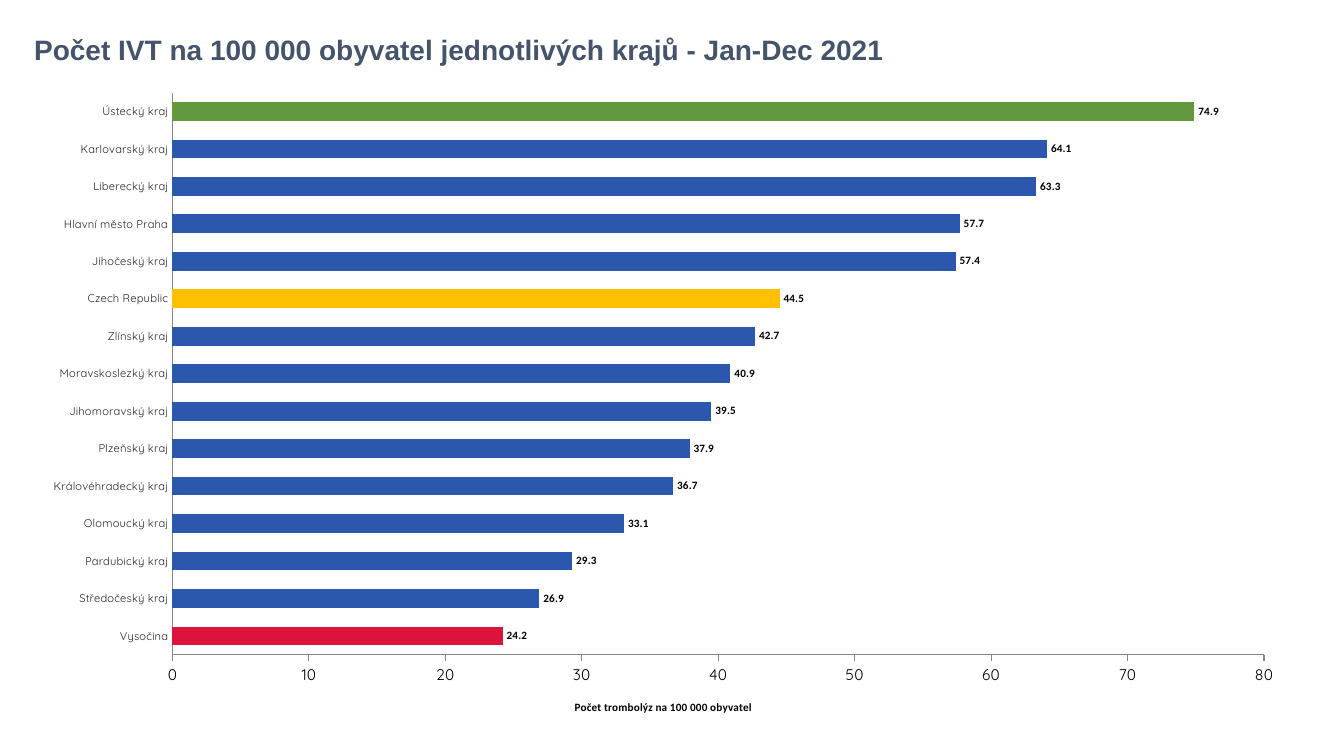
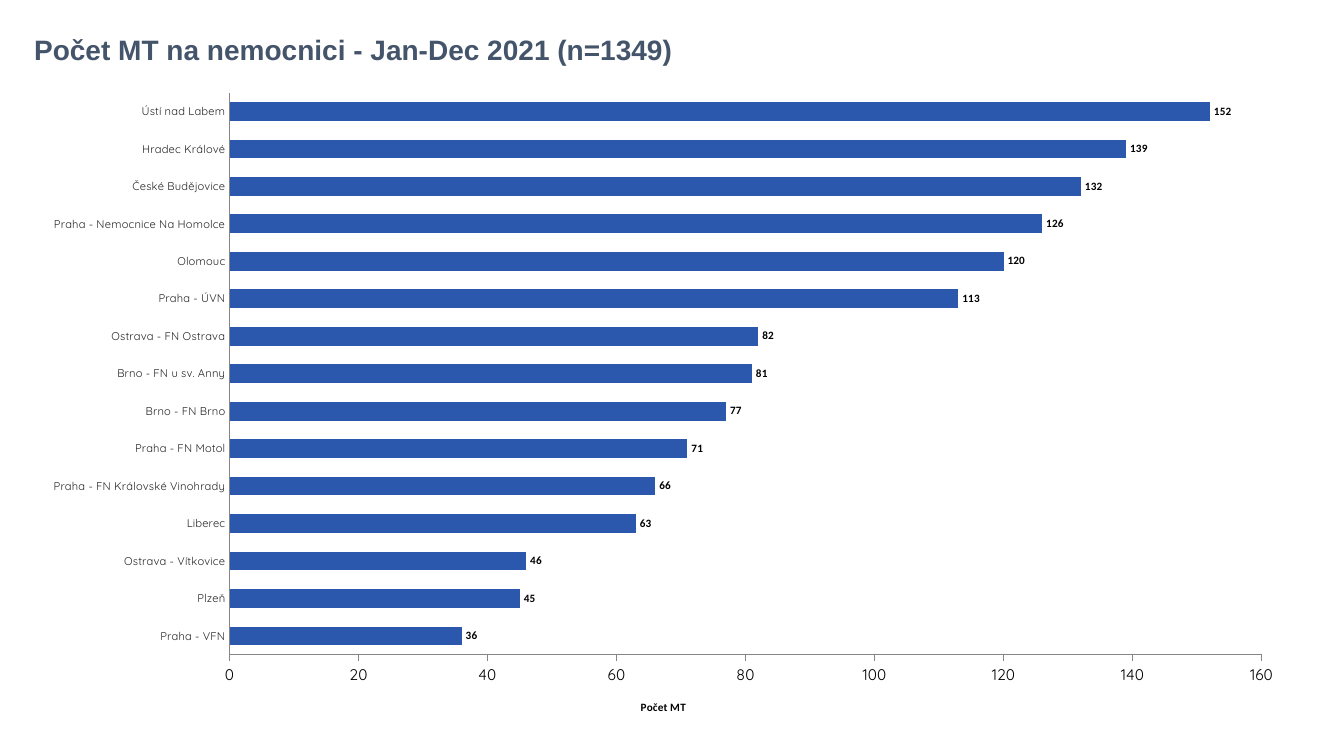
from dataclasses import dataclass

from pptx import Presentation
from pptx.chart.data import CategoryChartData
from pptx.dml.color import RGBColor as Rgb
from pptx.enum.chart import (XL_CHART_TYPE as ChartType, XL_LABEL_POSITION as LabelPosition,
                             XL_TICK_MARK as TickMark)
from pptx.enum.text import MSO_ANCHOR as Anchor
from pptx.util import Inches, Pt


@dataclass(frozen=True)
class Theme:
    heading: Rgb = Rgb.from_string("44546A")
    text: Rgb = Rgb.from_string("000000")
    category: Rgb = Rgb.from_string("262626")
    axis: Rgb = Rgb.from_string("868686")
    bar: Rgb = Rgb.from_string("2B58AD")
    lowest: Rgb = Rgb.from_string("DC143C")
    national: Rgb = Rgb.from_string("FFC000")
    highest: Rgb = Rgb.from_string("62993E")
    heading_font: str = "Arial"
    chart_font: str = "Calibri"
    axis_font: str = "Quicksand"
    heading_size: int = 20
    chart_size: int = 18
    scale_size: int = 11
    small_size: int = 8


THEME = Theme()
SLIDE_SIZE = (13.33, 7.5)
TITLE_BOX = (0.24, 0.15, 10.94, 0.72)
CHART_BOX = (0.28, 0.79, 12.6, 6.5)

REGIONS = {
    "Vysočina": 24.2,
    "Středočeský kraj": 26.9,
    "Pardubický kraj": 29.3,
    "Olomoucký kraj": 33.1,
    "Královéhradecký kraj": 36.7,
    "Plzeňský kraj": 37.9,
    "Jihomoravský kraj": 39.5,
    "Moravskoslezký kraj": 40.9,
    "Zlínský kraj": 42.7,
    "Czech Republic": 44.5,
    "Jihočeský kraj": 57.4,
    "Hlavní město Praha": 57.7,
    "Liberecký kraj": 63.3,
    "Karlovarský kraj": 64.1,
    "Ústecký kraj": 74.9,
}
HOSPITALS = {
    "Praha - VFN": 36,
    "Plzeň": 45,
    "Ostrava - Vítkovice": 46,
    "Liberec": 63,
    "Praha - FN Královské Vinohrady": 66,
    "Praha - FN Motol": 71,
    "Brno - FN Brno": 77,
    "Brno - FN u sv. Anny": 81,
    "Ostrava - FN Ostrava": 82,
    "Praha - ÚVN": 113,
    "Olomouc": 120,
    "Praha - Nemocnice Na Homolce": 126,
    "České Budějovice": 132,
    "Hradec Králové": 139,
    "Ústí nad Labem": 152,
}
RANKINGS = [
    {
        "title": "Počet IVT na 100 000 obyvatel jednotlivých krajů - Jan-Dec 2021",
        "scale_title": "Počet trombolýz na 100 000 obyvatel",
        "counts": REGIONS,
        "step": 10,
        "highlights": {"Vysočina": THEME.lowest, "Czech Republic": THEME.national,
                       "Ústecký kraj": THEME.highest},
    },
    {
        "title": "Počet MT na nemocnici - Jan-Dec 2021 (n=1349)",
        "scale_title": "Počet MT",
        "counts": HOSPITALS,
        "step": 20,
        "highlights": {},
    },
]


def set_all(target, **values):
    for name, value in values.items():
        setattr(target, name, value)


def style_font(font, name, size, color, bold=False):
    set_all(font, name=name, size=Pt(size), bold=bold)
    font.color.rgb = color


def add_title(slide, box, title):
    frame = slide.shapes.add_textbox(*map(Inches, box)).text_frame
    set_all(frame, word_wrap=True, vertical_anchor=Anchor.MIDDLE)
    heading = frame.paragraphs[0]
    set_all(heading, text=title, line_spacing=0.9)
    style_font(heading.font, THEME.heading_font, THEME.heading_size, THEME.heading, True)


def style_axis(axis, tick_mark, size, color):
    set_all(axis, has_major_gridlines=False, major_tick_mark=tick_mark,
            minor_tick_mark=TickMark.NONE)
    style_font(axis.tick_labels.font, THEME.axis_font, size, color)
    axis.format.line.color.rgb = THEME.axis
    axis.format.line.width = Pt(0.75)


def style_scale(axis, title, step, highest):
    """Start the value axis at zero and end it at the first step above the highest bar."""
    style_axis(axis, TickMark.OUTSIDE, THEME.scale_size, THEME.text)
    set_all(axis, minimum_scale=0, major_unit=step,
            maximum_scale=(highest // step + 1) * step)
    frame = axis.axis_title.text_frame
    frame.text = title
    style_font(frame.paragraphs[0].runs[0].font, THEME.chart_font, THEME.small_size,
               THEME.text, True)


def style_bars(plot, counts, highlights):
    set_all(plot, gap_width=100, vary_by_categories=False, has_data_labels=True)
    set_all(plot.data_labels, show_value=True, position=LabelPosition.OUTSIDE_END)
    style_font(plot.data_labels.font, THEME.chart_font, THEME.small_size, THEME.text, True)
    bars = plot.series[0]
    bars.invert_if_negative = False
    bars.format.fill.solid()
    bars.format.fill.fore_color.rgb = THEME.bar
    for index, category in enumerate(counts):
        if category in highlights:
            fill = bars.points[index].format.fill
            fill.solid()
            fill.fore_color.rgb = highlights[category]


def add_ranking_chart(slide, box, counts, scale_title, step, highlights):
    data = CategoryChartData()
    data.categories = list(counts)
    data.add_series("Series 1", list(counts.values()))
    chart = slide.shapes.add_chart(ChartType.BAR_CLUSTERED, *map(Inches, box), data).chart
    set_all(chart, has_legend=False, has_title=False)
    style_font(chart.font, THEME.chart_font, THEME.chart_size, THEME.text)
    style_axis(chart.category_axis, TickMark.NONE, THEME.small_size, THEME.category)
    style_scale(chart.value_axis, scale_title, step, max(counts.values()))
    style_bars(chart.plots[0], counts, highlights)


def add_ranking_slide(deck, title, **ranking):
    slide = deck.slides.add_slide(deck.slide_layouts[6])
    add_title(slide, TITLE_BOX, title)
    add_ranking_chart(slide, CHART_BOX, **ranking)


def main():
    deck = Presentation()
    deck.slide_width, deck.slide_height = map(Inches, SLIDE_SIZE)
    for ranking in RANKINGS:
        add_ranking_slide(deck, **ranking)
    deck.save("out.pptx")


if __name__ == "__main__":
    main()
